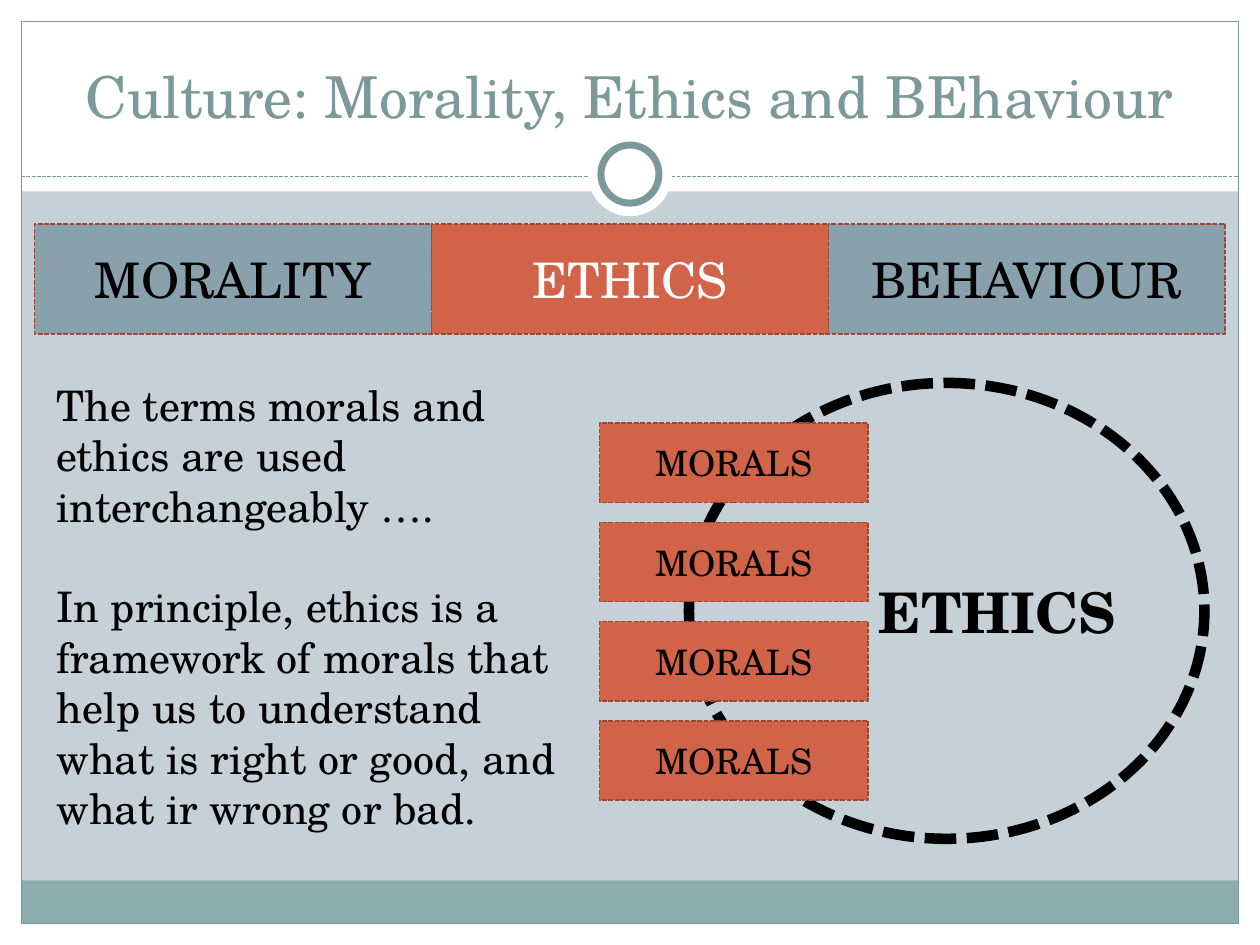
from lxml import etree
from pptx import Presentation
from pptx.dml.color import RGBColor
from pptx.enum.dml import MSO_LINE
from pptx.enum.shapes import MSO_CONNECTOR, MSO_SHAPE
from pptx.enum.text import MSO_ANCHOR, PP_ALIGN
from pptx.oxml.ns import qn
from pptx.util import Cm, Pt

RECTANGLE, OVAL = MSO_SHAPE.RECTANGLE, MSO_SHAPE.OVAL
STRAIGHT = MSO_CONNECTOR.STRAIGHT
DASH = MSO_LINE.SQUARE_DOT
LEFT, CENTER, RIGHT = PP_ALIGN.LEFT, PP_ALIGN.CENTER, PP_ALIGN.RIGHT
TOP, MIDDLE, BOTTOM = MSO_ANCHOR.TOP, MSO_ANCHOR.MIDDLE, MSO_ANCHOR.BOTTOM

WIDTH, HEIGHT = 25.4, 19.05
MARGIN = 0.43
WHITE, BLACK = "FFFFFF", "000000"
TEAL, FOOTER_TEAL = "7C999A", "8CADAE"
PALE, SLATE, BRICK, DARK_BRICK = "C5D1D7", "88A1AD", "D16349", "9B4936"


def color(value):
    return RGBColor.from_string(value)


def apply(target, values):
    for key, value in values.items():
        setattr(target, key, value)


class SlideBuilder:
    font = "TeX Gyre Schola"

    def __init__(self, slide, background):
        self.slide = slide
        slide.background.fill.solid()
        slide.background.fill.fore_color.rgb = color(background)

    def outline(self, line, ink, width, dash=None):
        line.color.rgb = color(ink)
        apply(line, {"width": Pt(width), "dash_style": dash})

    def shape(self, kind, box, fill=None, outline=None):
        shape = self.slide.shapes.add_shape(kind, *map(Cm, box))
        shape.shadow.inherit = False
        if fill:
            shape.fill.solid()
            shape.fill.fore_color.rgb = color(fill)
        else:
            shape.fill.background()
        if outline:
            self.outline(shape.line, *outline)
        else:
            shape.line.fill.background()
        return shape

    def line(self, start, end, outline):
        connector = self.slide.shapes.add_connector(STRAIGHT, *map(Cm, start + end))
        self.outline(connector.line, *outline)
        etree.SubElement(connector._element.spPr, qn("a:effectLst"))

    def set_text(self, shape, paragraphs, size, ink=BLACK, align=CENTER,
                 anchor=MIDDLE, bold=False, gap=0):
        frame = shape.text_frame
        apply(frame, {"text": "\n".join(paragraphs), "word_wrap": True,
                      "vertical_anchor": anchor})
        for index, paragraph in enumerate(frame.paragraphs):
            apply(paragraph, {"alignment": align,
                              "space_before": Pt(gap if index else 0)})
            font = paragraph.runs[0].font
            apply(font, {"name": self.font, "size": Pt(size), "bold": bold})
            font.color.rgb = color(ink)

    def text(self, box, paragraphs, size, **style):
        self.set_text(self.slide.shapes.add_textbox(*map(Cm, box)),
                      paragraphs, size, **style)

    def label(self, box, wording, size, fill, ink=BLACK):
        panel = self.shape(RECTANGLE, box, fill, (DARK_BRICK, 0.9, DASH))
        self.set_text(panel, [wording], size, ink)

    def circle(self, center_y, diameter, fill, outline=None):
        left, top = (WIDTH - diameter) / 2, center_y - diameter / 2
        self.shape(OVAL, (left, top, diameter, diameter), fill, outline)


def main():
    deck = Presentation()
    apply(deck, {"slide_width": Cm(WIDTH), "slide_height": Cm(HEIGHT)})
    builder = SlideBuilder(deck.slides.add_slide(deck.slide_layouts[6]), PALE)

    inner_width, inner_height = WIDTH - 2 * MARGIN, HEIGHT - 2 * MARGIN
    for border in ((0, HEIGHT - MARGIN, WIDTH, MARGIN), (0, 0, WIDTH, 3.86),
                   (0, 0, MARGIN, HEIGHT), (WIDTH - MARGIN, 0, MARGIN, HEIGHT)):
        builder.shape(RECTANGLE, border, WHITE)
    builder.shape(RECTANGLE, (MARGIN, 17.75, inner_width, 0.87), FOOTER_TEAL)
    builder.shape(RECTANGLE, (MARGIN, MARGIN, inner_width, inner_height),
                  outline=(TEAL, 0.75))
    builder.line((MARGIN, 3.56), (WIDTH - MARGIN, 3.56), (TEAL, 0.75, DASH))
    builder.circle(3.51, 1.7, WHITE)
    builder.circle(3.51, 1.17, WHITE, (TEAL, 4))

    builder.text((0.84, 0.64, 23.7, 2.11),
                 ["Culture: Morality, Ethics and BEhaviour"], 33,
                 ink=TEAL, anchor=BOTTOM)

    tab_width = 8
    tabs = (("MORALITY", SLATE, BLACK), ("ETHICS", BRICK, WHITE),
            ("BEHAVIOUR", SLATE, BLACK))
    for column, (topic, fill, ink) in enumerate(tabs):
        builder.label((0.7 + column * tab_width, 4.52, tab_width, 2.21),
                      topic, 28, fill, ink)

    ethics = builder.shape(OVAL, (13.89, 7.72, 10.39, 9.19),
                           outline=(BLACK, 6, DASH))
    builder.set_text(ethics, ["ETHICS"], 32, align=RIGHT, bold=True)

    builder.text((0.89, 7.52, 10.6, 9.5), [
        "The terms morals and ethics are used interchangeably ….",
        "In principle, ethics is a framework of morals that help us to "
        "understand what is right or good, and what ir wrong or bad.",
    ], 24, align=LEFT, anchor=TOP, gap=28.8)

    for row in range(4):
        builder.label((12.09, 8.53 + row * 2, 5.41, 1.6), "MORALS", 20, BRICK)

    deck.save("out.pptx")


if __name__ == "__main__":
    main()
